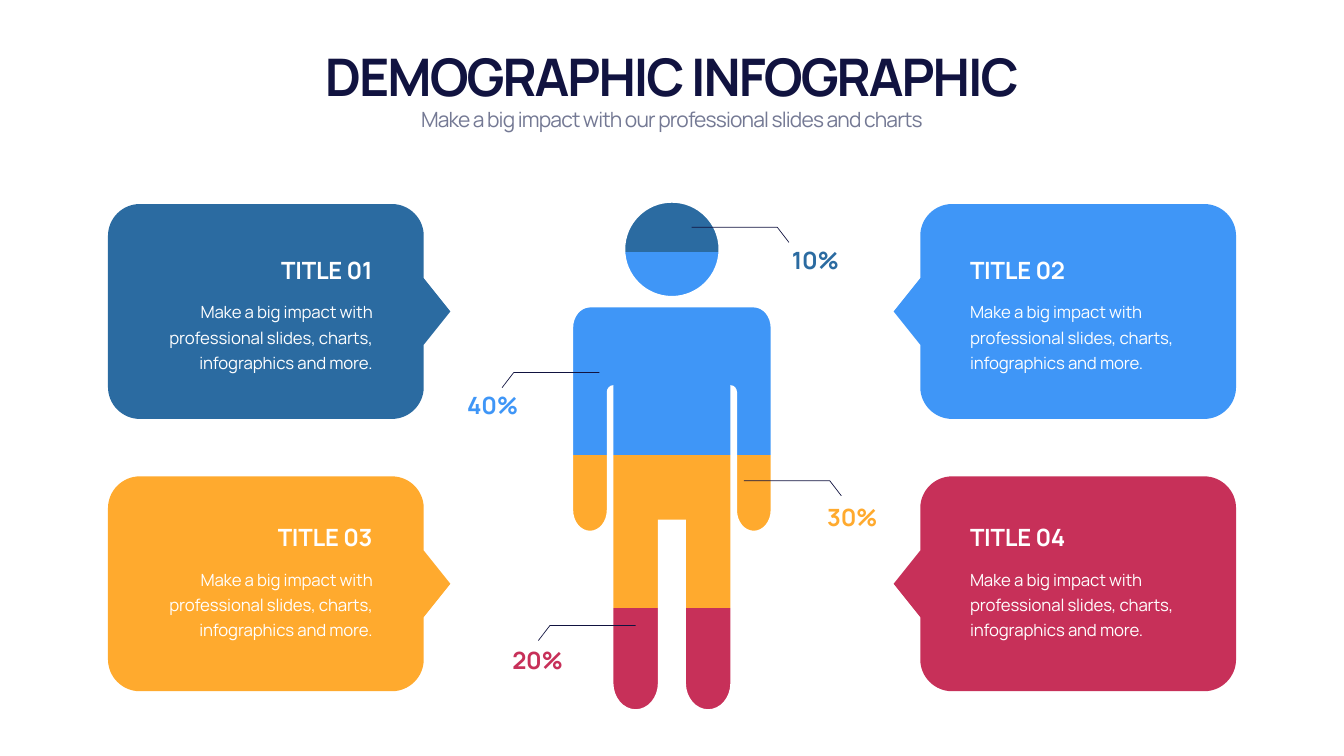
from dataclasses import dataclass
from itertools import chain
from math import cos, radians, sin

from lxml.etree import fromstring
from pptx import Presentation
from pptx.chart.data import CategoryChartData
from pptx.dml.color import RGBColor as Rgb
from pptx.enum.chart import XL_CHART_TYPE as ChartType
from pptx.enum.text import MSO_ANCHOR as Anchor, MSO_AUTO_SIZE as AutoSize, PP_ALIGN as Align
from pptx.oxml.ns import qn
from pptx.util import Pt


@dataclass(frozen=True)
class Theme:
    font: str = "Manrope"
    white: str = "FFFFFF"
    navy: str = "111340"
    grey: str = "747994"
    teal: str = "2B6BA1"
    blue: str = "3F96F7"
    orange: str = "FFAA2E"
    red: str = "C73059"
    heading: int = 74
    subheading: int = 30
    label: int = 34
    body: int = 24


THEME = Theme()
PAGE_W, PAGE_H = 1919.52, 1080
BLURB = "Make a big impact with professional slides, charts, infographics and more."
PLOT_LAYOUT = (
    '<c:layout xmlns:c="http://schemas.openxmlformats.org/drawingml/2006/chart">'
    '<c:manualLayout><c:layoutTarget val="inner"/><c:xMode val="edge"/><c:yMode val="edge"/>'
    '<c:x val="0"/><c:y val="0"/><c:w val="1"/><c:h val="1"/></c:manualLayout></c:layout>')


# Shared helpers
def add_text(slide, text, box, size, color, bold=False, align=Align.LEFT,
             anchor=Anchor.TOP, tracking=-0.3, leading=None):
    frame = slide.shapes.add_textbox(*map(Pt, box)).text_frame
    frame.word_wrap = True
    frame.auto_size = AutoSize.SHAPE_TO_FIT_TEXT
    frame.vertical_anchor = anchor
    paragraph = frame.paragraphs[0]
    paragraph.text = text
    paragraph.alignment = align
    if leading:
        paragraph.line_spacing = Pt(leading)
    font = paragraph.font
    font.name, font.size, font.bold = THEME.font, Pt(size), bold
    font.color.rgb = Rgb.from_string(color)
    font._element.set("spc", str(round(tracking * 100)))


# A contour is a list of steps: (point,) for a line, (control, control, point) for a curve
def corners(*points):
    return [(point,) for point in points]


def arc(cx, cy, rx, ry, start, end):
    turn = 90 if end > start else -90
    pull = 0.5523 * turn / 90

    def at(angle, tangent=0):
        c, s = cos(radians(angle)), sin(radians(angle))
        return cx + rx * (c - tangent * s), cy + ry * (s + tangent * c)

    quarters = [(at(a, pull), at(a + turn, -pull), at(a + turn)) for a in range(start, end, turn)]
    return corners(at(start)) + quarters


def add_outline(slide, left, top, contours, fill=None, line=None):
    builder = None
    for contour in contours:
        first, *rest = [(Pt(left + x), Pt(top + y)) for x, y in chain(*contour)]
        if builder is None:
            builder = slide.shapes.build_freeform(*first)
        else:
            builder.move_to(*first)
        builder.add_line_segments(rest, close=fill is not None)
    shape = builder.convert_to_shape()
    # Turn each three-point step into a Bezier curve
    segments = iter(shape._element.xpath(".//a:lnTo"))
    for step in chain(*(contour[1:] for contour in contours)):
        group = [next(segments) for _ in step]
        if len(group) == 3:
            curve = group[0].makeelement(qn("a:cubicBezTo"))
            group[0].addprevious(curve)
            for segment in group:
                curve.append(segment[0])
                segment.getparent().remove(segment)
    shape.shadow.inherit = False
    if fill:
        shape.fill.solid()
        shape.fill.fore_color.rgb = Rgb.from_string(fill)
    else:
        shape.fill.background()
    if line:
        shape.line.color.rgb = Rgb.from_string(line)
        shape.line.width = Pt(1)
    else:
        shape.line.fill.background()


# Heading and subheading
def add_header(slide, left, top, width):
    add_text(slide, "DEMOGRAPHIC INFOGRAPHIC", (left, top, width, 97.2), THEME.heading,
             THEME.navy, True, Align.CENTER, Anchor.BOTTOM, -2.9)
    add_text(slide, "Make a big impact with our professional slides and charts",
             (left, top + 90, width, 44), THEME.subheading, THEME.grey,
             align=Align.CENTER, tracking=-1.2)


# Stacked column that colours the person
def add_share_chart(slide, left, top, width, height):
    shares = [(20, THEME.red), (30, THEME.orange), (40, THEME.blue), (10, THEME.teal)]
    data = CategoryChartData()
    data.categories = ["1"]
    for number, (share, _) in enumerate(shares, 1):
        data.add_series(f"Series {number}", [share])
    chart = slide.shapes.add_chart(ChartType.COLUMN_STACKED_100, Pt(left), Pt(top),
                                   Pt(width), Pt(height), data).chart
    chart.has_title = chart.has_legend = False
    chart.font.name, chart.font.size, chart.font.bold = THEME.font, Pt(THEME.label), True
    chart.font.color.rgb = Rgb.from_string(THEME.white)
    chart.value_axis.has_major_gridlines = False
    chart.value_axis.tick_labels.number_format = "0%"
    chart.value_axis.tick_labels.number_format_is_linked = False
    chart.category_axis.visible = chart.value_axis.visible = False
    plot = chart.plots[0]
    plot.gap_width, plot.overlap, plot.vary_by_categories = 0, 100, False
    for series, (_, color) in zip(plot.series, shares):
        series.format.fill.solid()
        series.format.fill.fore_color.rgb = Rgb.from_string(color)
    # Stretch the plot over the whole frame
    plot_area = chart._chartSpace.xpath("c:chart/c:plotArea")[0]
    for layout in plot_area.xpath("c:layout"):
        plot_area.remove(layout)
    plot_area.insert(0, fromstring(PLOT_LAYOUT))


# White mask with a person-shaped opening
def add_person_mask(slide, left, top, width, height):
    left_arcs = [
        (33, 186, 24, 29, 270, 180),         # shoulder
        (33, 446.5, 24, 29.5, 180, 0),       # hand
        (66.5, 278, 9.5, 10, 180, 270),      # armpit
        (98.25, 693.5, 31.75, 37.5, 180, 0), # foot
    ]
    right_arcs = [(width - cx, cy, rx, ry, 180 - end, 180 - start)
                  for cx, cy, rx, ry, start, end in reversed(left_arcs)]
    crotch = corners((130, 460), (width - 130, 460))
    body = [*chain(*(arc(*a) for a in left_arcs)), *crotch,
            *chain(*(arc(*a) for a in right_arcs))]
    head = arc(width / 2, 74, 66.6, 66.6, 360, 0)
    frame = corners((0, 0), (width, 0), (width, height), (0, height))
    add_outline(slide, left, top, [body, head, frame], THEME.white)


# Leader line with its percentage; side is 1 to the right, -1 to the left
def add_share_label(slide, text, color, side, start, label):
    leader = corners((0, 0), (side * 122.4, 0), (side * 139, 21.6))
    add_outline(slide, *start, [leader], line=THEME.navy)
    add_text(slide, text, (*label, 102.2, 48.2), THEME.label, color, True,
             Align.LEFT if side > 0 else Align.RIGHT, Anchor.MIDDLE)


def add_person(slide, left, top, width, height):
    add_share_chart(slide, left + 4, top + 4.5, width - 7, height - 10)
    add_person_mask(slide, left, top, width, height)
    for text, color, side, start, label in [
        ("10%", THEME.teal, 1, (178.2, 42.5), (314.3, 65)),
        ("40%", THEME.blue, -1, (46.5, 250), (-164.5, 272)),
        ("30%", THEME.orange, 1, (253, 404.5), (364.7, 432.5)),
        ("20%", THEME.red, -1, (98.3, 611.3), (-100.5, 636.5)),
    ]:
        add_share_label(slide, text, color, side, (left + start[0], top + start[1]),
                        (left + label[0], top + label[1]))


# Rounded card whose pointer faces the person
def add_card(slide, left, top, width, height, title, color, points_right, text_top):
    radius, pointer, half_base, text_width = 45.6, 38, 47.5, 324
    edge, middle = width - pointer, height / 2
    outline = [
        *arc(radius, radius, radius, radius, 180, 270),
        *arc(edge - radius, radius, radius, radius, 270, 360),
        *corners((edge, middle - half_base), (width, middle), (edge, middle + half_base)),
        *arc(edge - radius, height - radius, radius, radius, 0, 90),
        *arc(radius, height - radius, radius, radius, 90, 180),
    ]
    if points_right:
        text_left, align = left + 61, Align.RIGHT
    else:
        outline = [tuple((width - x, y) for x, y in step) for step in outline]
        text_left, align = left + 102, Align.LEFT
    add_outline(slide, left, top, [outline], color)
    add_text(slide, title, (text_left, top + text_top, text_width, 48.2), THEME.label,
             THEME.white, True, align, Anchor.BOTTOM)
    add_text(slide, BLURB, (text_left, top + text_top + 60, text_width, 114.5),
             THEME.body, THEME.white, align=align, tracking=-0.2, leading=36)


def add_cards(slide, left, top, width):
    card_w, card_h, row_step = 489, 307, 389
    for index, color in enumerate([THEME.teal, THEME.blue, THEME.orange, THEME.red]):
        row, column = divmod(index, 2)
        add_card(slide, left + column * (width - card_w), top + row * row_step, card_w, card_h,
                 f"TITLE {index + 1:02d}", color, column == 0, (69.3, 62.6)[row])


def main():
    deck = Presentation()
    deck.slide_width, deck.slide_height = Pt(PAGE_W), Pt(PAGE_H)
    slide = deck.slides.add_slide(deck.slide_layouts[6])
    add_person(slide, 809.6, 282.2, 300, 738)
    add_cards(slide, 154.2, 291.5, PAGE_W - 2 * 154.2)
    add_header(slide, 119.5, 59, 1680)
    deck.save("out.pptx")


if __name__ == "__main__":
    main()
